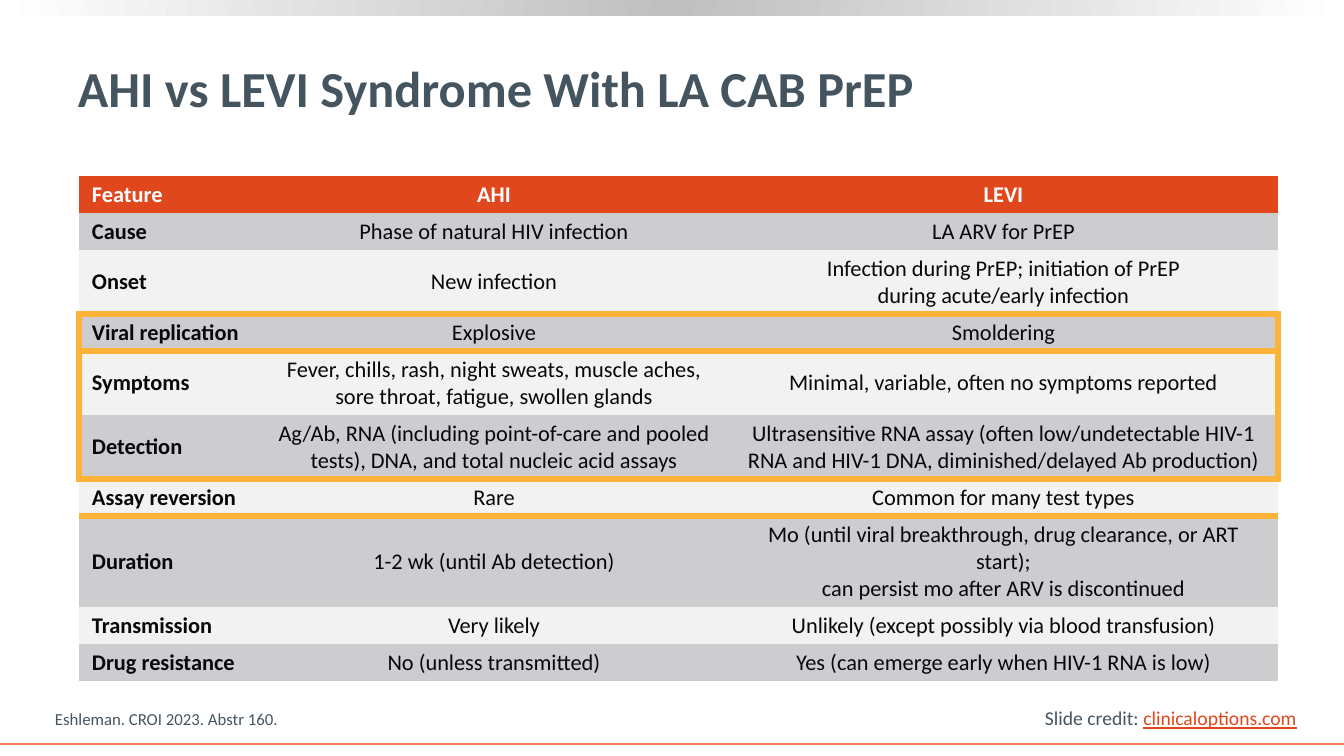
from dataclasses import dataclass

from lxml.etree import SubElement
from pptx import Presentation
from pptx.dml.color import RGBColor as Rgb
from pptx.enum.shapes import MSO_CONNECTOR as Line, MSO_SHAPE as Shape
from pptx.enum.text import MSO_ANCHOR as Anchor, PP_ALIGN as Align
from pptx.oxml import parse_xml
from pptx.oxml.ns import nsdecls, qn
from pptx.util import Pt

SCALE = 12192000 / 1344  # EMU per px
NO_GRID = "{2D5ABB26-0587-4C30-8999-92F81FD0307C}"


def px(n):
    return round(n * SCALE)


@dataclass(frozen=True)
class Theme:
    font: str = "Calibri"
    slate: str = "455560"
    red: str = "E1471D"
    coral: str = "F47D55"
    amber: str = "FDB338"
    ink: str = "07080A"
    white: str = "FFFFFF"
    silver: str = "BFBFBF"
    dark: str = "CDCDCF"
    light: str = "F2F2F2"
    title: int = 36
    body: int = 16
    credit: int = 14
    note: int = 12


class Deck:
    def __init__(self, theme):
        self.theme = theme
        self.prs = Presentation()
        self.prs.slide_width, self.prs.slide_height = px(1344), px(756)
        self.slide = self.prs.slides.add_slide(self.prs.slide_layouts[6])

    def run(self, para, text, size, color, bold=False, under=False):
        run = para.add_run()
        run.text = text
        font = run.font
        font.name, font.size, font.bold = self.theme.font, Pt(size), bold
        font.color.rgb = Rgb.from_string(color)
        if under:
            font.underline = True

    def text(self, box, runs, size, anchor=Anchor.TOP, wrap=True, bold=False):
        frame = self.slide.shapes.add_textbox(*map(px, box)).text_frame
        frame.word_wrap, frame.vertical_anchor = wrap, anchor
        for text, color, under in runs:
            self.run(frame.paragraphs[0], text, size, color, bold, under)

    def fade(self, box, colors, angle):
        bar = self.slide.shapes.add_shape(Shape.RECTANGLE, *map(px, box))
        bar.shadow.inherit = False
        bar.line.fill.background()
        step = 100000 // (len(colors) - 1)
        stops = "".join(
            f'<a:gs pos="{i * step}"><a:srgbClr val="{c}"/></a:gs>'
            for i, c in enumerate(colors))
        bar._element.spPr.insert(2, parse_xml(
            f'<a:gradFill {nsdecls("a")}><a:gsLst>{stops}</a:gsLst>'
            f'<a:lin ang="{angle * 60000}" scaled="0"/></a:gradFill>'))

    def rule(self, x1, y1, x2, y2, color, width):
        line = self.slide.shapes.add_connector(
            Line.STRAIGHT, *map(px, (x1, y1, x2, y2)))
        line.line.color.rgb = Rgb.from_string(color)
        line.line.width = Pt(width)
        SubElement(line._element.spPr, qn("a:effectLst"))

    def edge(self, cell, side, color, width):
        cell._tc.get_or_add_tcPr().append(parse_xml(
            f'<a:ln{side} {nsdecls("a")} w="{Pt(width)}"><a:solidFill>'
            f'<a:srgbClr val="{color}"/></a:solidFill></a:ln{side}>'))

    def cell(self, cell, text, fill, color, bold, align):
        cell.fill.solid()
        cell.fill.fore_color.rgb = Rgb.from_string(fill)
        cell.vertical_anchor = Anchor.MIDDLE
        cell.margin_left = cell.margin_right = px(13)
        cell.margin_top = cell.margin_bottom = px(5)
        para = cell.text_frame.paragraphs[0]
        para.alignment = align
        for i, part in enumerate(text.split("\n")):
            if i:
                para.add_line_break()
            self.run(para, part, self.theme.body, color, bold)

    def table(self, x, y, cols, rows, first, last):
        """Rows are (line count, texts); rows first to last get a frame."""
        t = self.theme
        highs = [37 + 27 * (count - 1) for count, _ in rows]
        grid = self.slide.shapes.add_table(
            len(rows), len(cols),
            *map(px, (x, y, sum(cols), sum(highs)))).table
        grid._tbl.tblPr.find(qn("a:tableStyleId")).text = NO_GRID
        for col, wide in zip(grid.columns, cols):
            col.width = px(wide)
        for r, (_, texts) in enumerate(rows):
            grid.rows[r].height = px(highs[r])
            fill = t.red if r == 0 else t.dark if r % 2 else t.light
            color = t.ink if r else t.white
            for c, text in enumerate(texts):
                cell = grid.cell(r, c)
                framed = first <= r <= last
                sides = {
                    "L": framed and c == 0,
                    "R": framed and c == len(cols) - 1,
                    "T": r in (first, last + 1),
                    "B": r in (first - 1, last),
                }
                for side, drawn in sides.items():
                    if drawn:
                        self.edge(cell, side, t.amber, 4.5)
                self.cell(cell, text, fill, color, r == 0 or c == 0,
                          Align.CENTER if c else Align.LEFT)


ROWS = [
    (1, ("Feature", "AHI", "LEVI")),
    (1, ("Cause", "Phase of natural HIV infection", "LA ARV for PrEP")),
    (2, ("Onset", "New infection",
         "Infection during PrEP; initiation of PrEP\n"
         "during acute/early infection")),
    (1, ("Viral replication", "Explosive", "Smoldering")),
    (2, ("Symptoms",
         "Fever, chills, rash, night sweats, muscle aches, "
         "sore throat, fatigue, swollen glands",
         "Minimal, variable, often no symptoms reported")),
    (2, ("Detection",
         "Ag/Ab, RNA (including point-of-care and pooled tests), "
         "DNA, and total nucleic acid assays",
         "Ultrasensitive RNA assay (often low/undetectable HIV-1 RNA "
         "and HIV-1 DNA, diminished/delayed Ab production)")),
    (1, ("Assay reversion", "Rare", "Common for many test types")),
    (3, ("Duration", "1-2 wk (until Ab detection)",
         "Mo (until viral breakthrough, drug clearance, or ART start);\n"
         "can persist mo after ARV is discontinued")),
    (1, ("Transmission", "Very likely",
         "Unlikely (except possibly via blood transfusion)")),
    (1, ("Drug resistance", "No (unless transmitted)",
         "Yes (can emerge early when HIV-1 RNA is low)")),
]


def main():
    t = Theme()
    deck = Deck(t)

    # Top band and bottom rule
    deck.fade((0, 0, 1344, 16), (t.white, t.silver, t.white), 190)
    deck.rule(0, 744, 1344, 744, t.coral, 1.5)

    # Title
    deck.text((68, 26, 1199, 122),
              [("AHI vs LEVI Syndrome With LA CAB PrEP", t.slate, False)],
              t.title, Anchor.MIDDLE, bold=True)

    # Comparison table, with the key rows framed
    deck.table(79, 176, (180, 470, 549), ROWS, 3, 5)

    # Source and credit
    deck.text((45, 704, 883, 30),
              [("Eshleman. CROI 2023. Abstr 160.", t.slate, False)],
              t.note, Anchor.BOTTOM)
    deck.text((1035, 701, 274, 34),
              [("Slide credit: ", t.slate, False),
               ("clinicaloptions.com", t.red, True)],
              t.credit, wrap=False)

    deck.prs.save("out.pptx")


if __name__ == "__main__":
    main()
